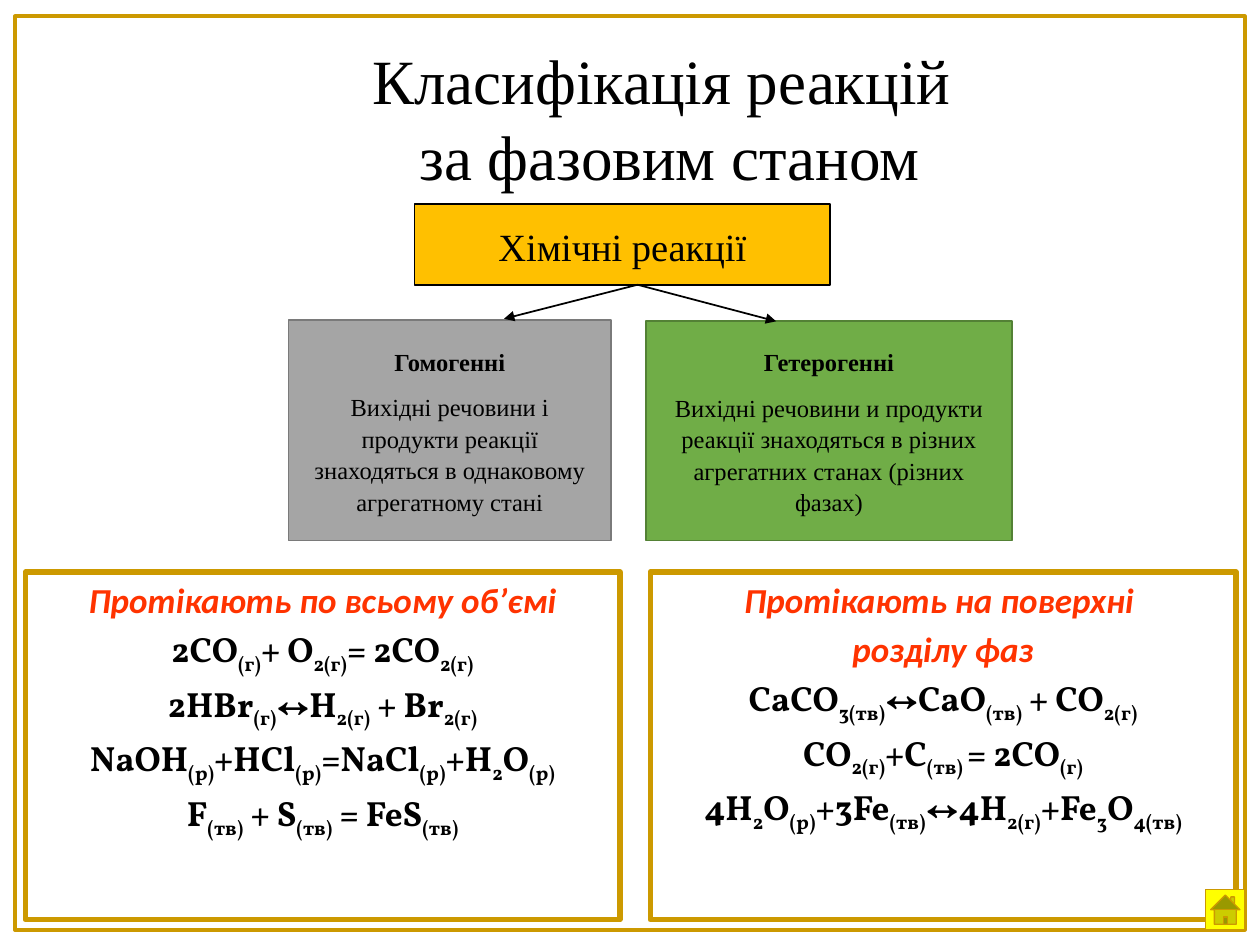
from lxml import etree
from pptx import Presentation
from pptx.dml.color import RGBColor
from pptx.enum import shapes, text
from pptx.oxml.ns import qn
from pptx.util import Inches, Pt

GOLD = RGBColor(0xCC, 0x99, 0x00)
AMBER = RGBColor(0xFF, 0xC0, 0x00)
GREY = RGBColor(0xA5, 0xA5, 0xA5)
DARK_GREY = RGBColor(0x7A, 0x7A, 0x7A)
GREEN = RGBColor(0x70, 0xAD, 0x47)
DARK_GREEN = RGBColor(0x53, 0x81, 0x35)
YELLOW = RGBColor(0xFF, 0xFF, 0x00)
RED = RGBColor(0xFF, 0x33, 0x00)
BLACK = RGBColor(0, 0, 0)

SERIF = "Times New Roman"
TITLE_FONT = dict(name=SERIF, size=Pt(36), bold=False)
ROOT_FONT = dict(name=SERIF, size=Pt(22), bold=False)
CLASS_FONT = dict(name=SERIF, size=Pt(14), bold=False)
CLASS_HEAD = {**CLASS_FONT, "bold": True}
PLACE_FONT = dict(name="Calibri", size=Pt(20), bold=True, italic=True)
EQUATION_FONT = dict(name="Vollkorn", size=Pt(20), bold=True, italic=False)

CHART_SPACING = dict(line_spacing=1.07, space_after=Pt(8))
PANEL_SPACING = dict(space_before=Pt(4))

TITLE = ["Класифікація реакцій ", "за фазовим станом"]

# box, fill, line, paragraphs as (text, font)
CLASSES = [
    ((3.29, 1.62, 3.3, 0.64), AMBER, BLACK, [("Хімічні реакції", ROOT_FONT)]),
    ((2.29, 2.54, 2.56, 1.75), GREY, DARK_GREY, [
        ("Гомогенні", CLASS_HEAD),
        ("Вихідні речовини і продукти реакції знаходяться в однаковому "
         "агрегатному стані", CLASS_FONT)]),
    ((5.13, 2.55, 2.9, 1.74), GREEN, DARK_GREEN, [
        ("Гетерогенні", CLASS_HEAD),
        ("Вихідні речовини и продукти реакції знаходяться в різних "
         "агрегатних станах (різних фазах)", CLASS_FONT)]),
]
ARROW_START = (5.06, 2.26)
ARROW_ENDS = [(4, 2.53), (6.16, 2.55)]

# box, heading lines, equations with subscripts between underscores
PANELS = [
    ((0.2, 4.54, 4.72, 2.76), ["Протікають по всьому об’ємі"], [
        "2СО_(г)_+ О_2(г)_= 2СО_2(г)_",
        "2HBr_(г)_↔H_2(г)_ + Br_2(г)_",
        "NaOH_(р)_+HCl_(р)_=NaCl_(р)_+H_2_O_(р)_",
        "F_(тв)_ + S_(тв)_ = FeS_(тв)_"]),
    ((5.16, 4.54, 4.65, 2.76), ["Протікають на поверхні ", "розділу фаз"], [
        "CaCO_3(тв)_↔CaO_(тв)_ + CO_2(г)_",
        "CO_2(г)_+С_(тв) _= 2СО_(г)_",
        "4H_2_O_(р)_+3Fe_(тв)_↔4H_2(г)_+Fe_3_O_4(тв)_"]),
]
FRAME = (0.12, 0.13, 9.76, 7.25)
HOME_BUTTON = (9.57, 7.06, 0.31, 0.32)


def apply(target, values):
    for name, value in values.items():
        setattr(target, name, value)


def add_box(slide, kind, box, fill, line, width):
    shape = slide.shapes.add_shape(kind, *map(Inches, box))
    shape.shadow.inherit = False
    if fill is None:
        shape.fill.background()
    else:
        shape.fill.solid()
        shape.fill.fore_color.rgb = fill
    shape.line.color.rgb = line
    shape.line.width = Pt(width)
    return shape


def write(frame, lines, anchor, spacing):
    """Fill a frame with centred (text, font, colour) lines; _x_ is a subscript."""
    apply(frame, dict(word_wrap=True, vertical_anchor=anchor,
                      auto_size=text.MSO_AUTO_SIZE.NONE))
    for i, (line, font, colour) in enumerate(lines):
        paragraph = frame.add_paragraph() if i else frame.paragraphs[0]
        apply(paragraph, {"alignment": text.PP_ALIGN.CENTER, **spacing})
        for j, piece in enumerate(line.split("_")):
            if not piece:
                continue
            run = paragraph.add_run()
            run.text = piece
            apply(run.font, font)
            run.font.color.rgb = colour
            if j % 2:
                run._r.get_or_add_rPr().set("baseline", "-25000")


def add_arrow(slide, start, end):
    arrow = slide.shapes.add_connector(
        shapes.MSO_CONNECTOR.STRAIGHT, *map(Inches, start + end))
    arrow.line.color.rgb = BLACK
    arrow.line.width = Pt(1)
    etree.SubElement(arrow.line._get_or_add_ln(), qn("a:tailEnd"), type="triangle")
    etree.SubElement(arrow._element.spPr, qn("a:effectLst"))


def main():
    prs = Presentation()
    prs.slide_width, prs.slide_height = Inches(10), Inches(7.5)
    slide = prs.slides.add_slide(prs.slide_layouts[5])
    rectangle = shapes.MSO_SHAPE.RECTANGLE
    top, middle = text.MSO_ANCHOR.TOP, text.MSO_ANCHOR.MIDDLE

    title = slide.shapes.title
    apply(title, dict(left=Inches(2.4), top=Inches(0.28),
                      width=Inches(5.83), height=Inches(1.34)))
    write(title.text_frame, [(line, TITLE_FONT, BLACK) for line in TITLE], top, {})

    for box, headings, equations in PANELS:
        panel = add_box(slide, rectangle, box, None, GOLD, 3)
        lines = [(line, PLACE_FONT, RED) for line in headings]
        lines += [(line, EQUATION_FONT, BLACK) for line in equations]
        write(panel.text_frame, lines, top, PANEL_SPACING)

    add_box(slide, rectangle, FRAME, None, GOLD, 2.25)
    add_box(slide, shapes.MSO_SHAPE.ACTION_BUTTON_HOME, HOME_BUTTON, YELLOW, GOLD, 0.75)

    for box, fill, line, paragraphs in CLASSES:
        node = add_box(slide, rectangle, box, fill, line, 1)
        write(node.text_frame, [(words, font, BLACK) for words, font in paragraphs],
              middle, CHART_SPACING)
    for end in ARROW_ENDS:
        add_arrow(slide, ARROW_START, end)

    prs.save("out.pptx")


if __name__ == "__main__":
    main()
